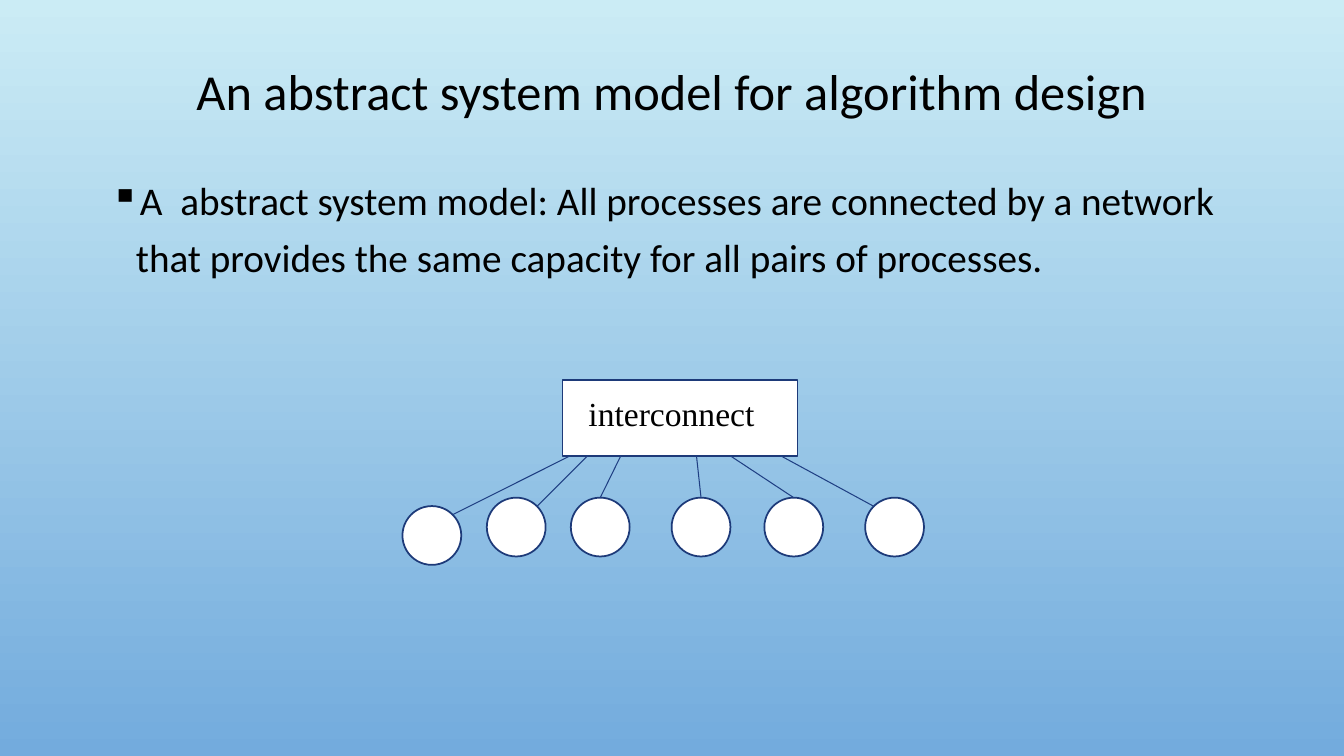
from dataclasses import dataclass
from math import cos, radians, sin

from lxml import etree
from pptx import Presentation
from pptx.dml.color import RGBColor
from pptx.enum import shapes, text
from pptx.oxml import ns
from pptx.util import Pt


@dataclass(frozen=True)
class Theme:
    sky: str = "CBECF5"
    deep: str = "73ABDD"
    ink: str = "000000"
    paper: str = "FFFFFF"
    outline: str = "1D3A79"
    link: str = "1F3F83"
    sans: str = "Calibri"
    serif: str = "Times New Roman"
    title: int = 36
    body: int = 28
    label: int = 24
    border: float = 1.25
    hairline: float = 0.75


THEME = Theme()
BOX = (401.75, 271.5, 168, 54)
BOX_BOTTOM = BOX[1] + BOX[3]
DIAMETER = 42
PROCESSES = [
    (287.5, 361.5, 45, 407.5),
    (347.75, 355.5, 45, 419.75),
    (407.75, 355.5, 0, 443.5),
    (479.75, 355.5, 0, 497.5),
    (546, 355.5, 0, 521.5),
    (618, 355.5, -45, 557.5),
]


def rgb(value):
    return RGBColor.from_string(value)


def paint_background(slide):
    fill = slide.background.fill
    fill.gradient()
    fill.gradient_angle = 270
    for stop, color in zip(fill.gradient_stops, (THEME.sky, THEME.deep)):
        stop.color.rgb = rgb(color)


def add_text(slide, at, content, size, font, spacing=1.0, wrap=True):
    tf = slide.shapes.add_textbox(*map(Pt, at)).text_frame
    tf.word_wrap = wrap
    p = tf.paragraphs[0]
    p.text = content
    p.line_spacing = spacing
    f = p.runs[0].font
    f.size, f.name = Pt(size), font
    f.color.rgb = rgb(THEME.ink)
    return p


def add_bullet(p, mark, indent):
    pPr = p._p.get_or_add_pPr()
    pPr.set("marL", str(Pt(indent)))
    pPr.set("indent", str(-Pt(indent)))
    etree.SubElement(pPr, ns.qn("a:buChar")).set("char", mark)


def add_node(slide, kind, at):
    sp = slide.shapes.add_shape(kind, *map(Pt, at))
    sp.shadow.inherit = False
    sp.fill.solid()
    sp.fill.fore_color.rgb = rgb(THEME.paper)
    sp.line.color.rgb = rgb(THEME.outline)
    sp.line.width = Pt(THEME.border)


def add_link(slide, start, end):
    c = slide.shapes.add_connector(
        shapes.MSO_CONNECTOR.STRAIGHT, *map(Pt, start + end))
    c.line.color.rgb = rgb(THEME.link)
    c.line.width = Pt(THEME.hairline)
    etree.SubElement(c._element.spPr, ns.qn("a:effectLst"))


def add_process(slide, left, top, angle, port):
    add_node(slide, shapes.MSO_SHAPE.OVAL, (left, top, DIAMETER, DIAMETER))
    radius = DIAMETER / 2
    rim = (left + radius * (1 + sin(radians(angle))),
           top + radius * (1 - cos(radians(angle))))
    add_link(slide, rim, (port, BOX_BOTTOM))


def main():
    prs = Presentation()
    prs.slide_width, prs.slide_height = Pt(960), Pt(540)
    slide = prs.slides.add_slide(prs.slide_layouts[6])
    paint_background(slide)

    p = add_text(slide, (72, 23, 816, 88.5),
                 "An abstract system model for algorithm design",
                 THEME.title, THEME.sans, 0.9)
    p.alignment = text.PP_ALIGN.CENTER
    p._parent.vertical_anchor = text.MSO_ANCHOR.MIDDLE

    p = add_text(slide, (72, 116, 816, 113.75),
                 "A  abstract system model: All processes are connected by a "
                 "network that provides the same capacity for all pairs of "
                 "processes.", THEME.body, THEME.sans, 1.2)
    add_bullet(p, "▪", 18)

    add_node(slide, shapes.MSO_SHAPE.RECTANGLE, BOX)
    add_text(slide, (413.25, 277.25, 134, 36.5), "interconnect",
             THEME.label, THEME.serif, wrap=False)
    for process in PROCESSES:
        add_process(slide, *process)
    prs.save("out.pptx")


if __name__ == "__main__":
    main()
